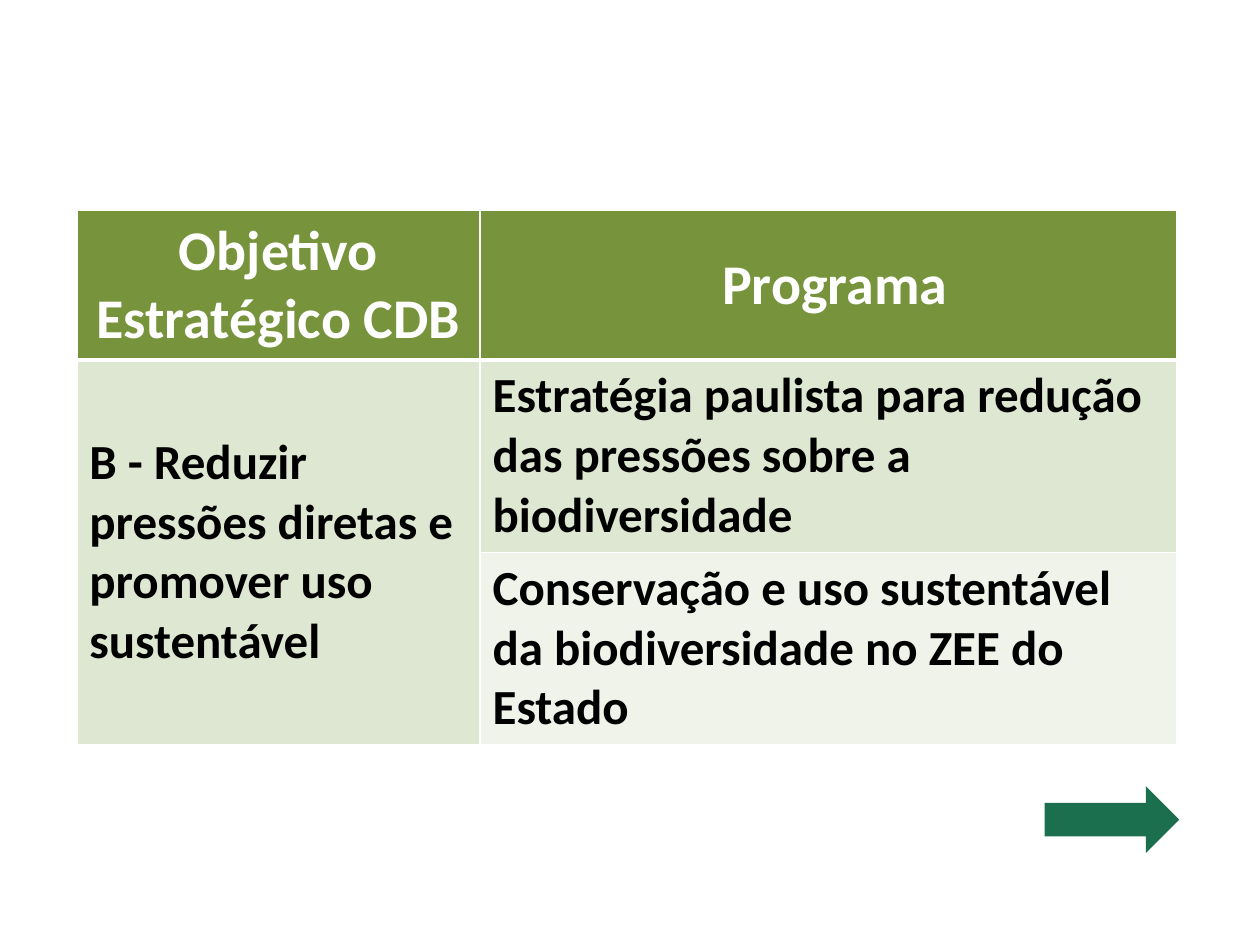
from lxml.etree import SubElement
from pptx import Presentation
from pptx.dml.color import RGBColor
from pptx.enum.shapes import MSO_SHAPE as SHAPE
from pptx.enum.text import MSO_ANCHOR as ANCHOR, PP_ALIGN as ALIGN
from pptx.oxml.ns import qn
from pptx.util import Inches, Pt

HEADER = dict(size=32, color="FFFFFF", align=ALIGN.CENTER)
BODY = dict(size=28, color="000000", align=ALIGN.LEFT)


def rgb(value):
    return RGBColor.from_string(value)


class SlideBuilder:
    """Holds the shared style and the slide being built."""

    font = "Calibri"
    border = "FFFFFF"

    def __init__(self, slide):
        self.s = slide

    def table(self, left, top, height, widths, row_height, rows, fills):
        """Add a table whose rows grow from row_height to fit their text."""
        frame = self.s.shapes.add_table(
            len(rows), len(widths), Inches(left), Inches(top),
            Inches(sum(widths)), Inches(height))
        tbl = frame.table
        for col, width in zip(tbl.columns, widths):
            col.width = Inches(width)
        for row in tbl.rows:
            row.height = Inches(row_height)
        frame.height = Inches(height)
        for i, texts in enumerate(rows):
            for j, text in enumerate(texts):
                self.cell(tbl.cell(i, j), text, fills[i][j], i)
        return tbl

    def cell(self, cell, text, fill, row):
        style = BODY if row else HEADER
        self.borders(cell, top=1 if row != 1 else 3, bottom=1 if row else 3)
        cell.fill.solid()
        cell.fill.fore_color.rgb = rgb(fill)
        cell.vertical_anchor = ANCHOR.MIDDLE
        if text:
            p = cell.text_frame.paragraphs[0]
            p.alignment = style["align"]
            r = p.add_run()
            r.text = text
            values = dict(name=self.font, size=Pt(style["size"]), bold=True)
            for name, value in values.items():
                setattr(r.font, name, value)
            r.font.color.rgb = rgb(style["color"])

    def borders(self, cell, top, bottom):
        tc_pr = cell._tc.get_or_add_tcPr()
        for side, width in dict(L=1, R=1, T=top, B=bottom).items():
            line = SubElement(tc_pr, qn(f"a:ln{side}"), w=str(Pt(width)))
            fill = SubElement(line, qn("a:solidFill"))
            SubElement(fill, qn("a:srgbClr"), val=self.border)

    def arrow(self, left, top, width, height, color):
        sp = self.s.shapes.add_shape(
            SHAPE.RIGHT_ARROW, *map(Inches, (left, top, width, height)))
        sp.shadow.inherit = False
        sp.fill.solid()
        sp.fill.fore_color.rgb = rgb(color)
        sp.line.fill.background()


def main():
    prs = Presentation()
    prs.slide_width, prs.slide_height = Inches(10), Inches(7.5)
    builder = SlideBuilder(prs.slides.add_slide(prs.slide_layouts[6]))

    green, light, pale = "77933C", "DEE7D1", "EFF3EA"
    rows = [
        ("Objetivo Estratégico CDB", " Programa"),
        ("B - Reduzir pressões diretas e promover uso sustentável",
         "Estratégia paulista para redução das pressões sobre a biodiversidade"),
        ("", "Conservação e uso sustentável da biodiversidade no ZEE do Estado"),
    ]
    fills = [(green, green), (light, light), (light, pale)]
    tbl = builder.table(0.61, 1.67, 4.17, (3.2, 5.53), 0.82, rows, fills)
    tbl.cell(1, 0).merge(tbl.cell(2, 0))

    builder.arrow(8.29, 6.24, 1.07, 0.53, "1B6F4F")
    prs.save("out.pptx")


if __name__ == "__main__":
    main()
